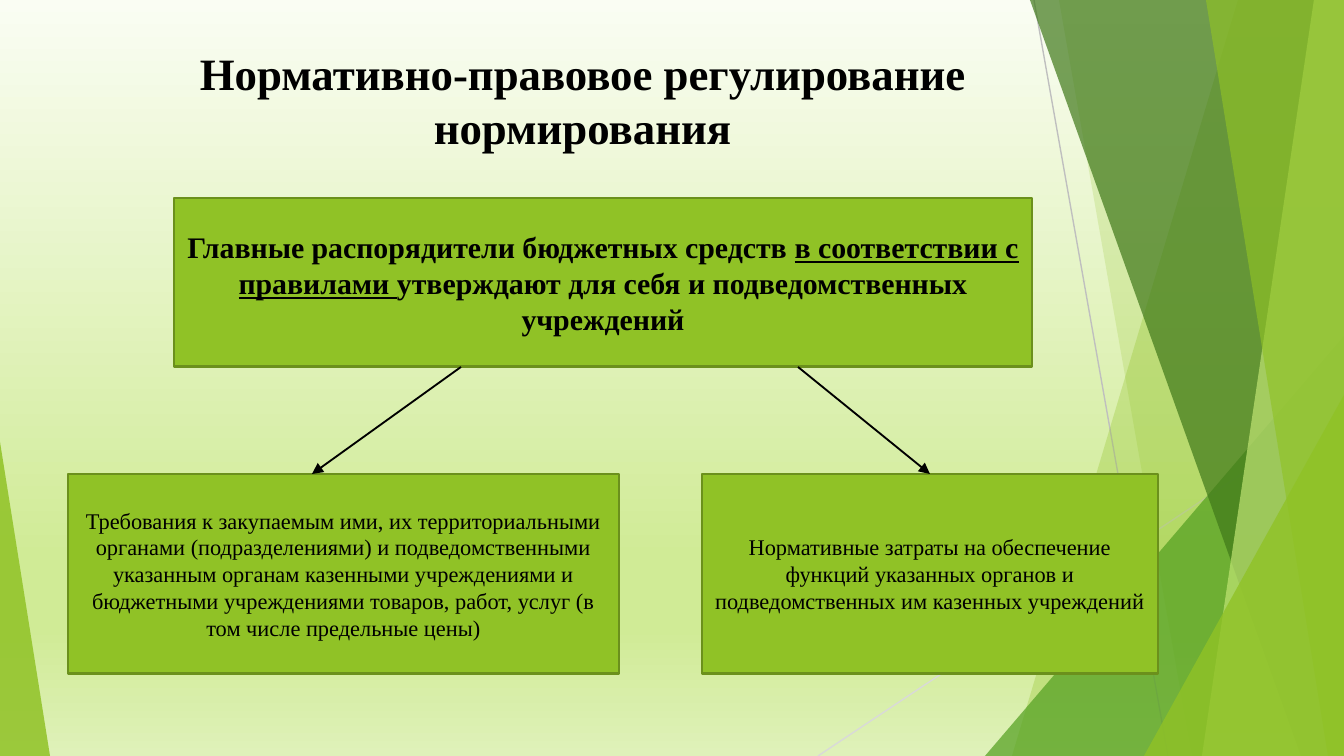
import pptx
import pptx.dml.color
import pptx.enum.dml
import pptx.enum.shapes
import pptx.enum.text
import pptx.oxml
import pptx.oxml.ns
import pptx.util
from dataclasses import dataclass
from lxml import etree

SCALE = 914400 / 134.4
WIDE, HIGH = 1344, 756
QN = pptx.oxml.ns.qn
KIND = pptx.enum.shapes.MSO_SHAPE


@dataclass(frozen=True)
class Theme:
    """Colours, font and type sizes of the slide."""
    font: str = "Times New Roman"
    ink: str = "000000"
    lime: str = "90C226"
    edge: str = "6B901C"
    leaf: str = "54A021"
    pine: str = "3F7819"
    pale: str = "C0E474"
    grey: str = "BFBFBF"
    mist: str = "D9D9D9"
    sky: tuple = ((0, "FAFDF3"), (74, "D0EB96"), (83, "D0EB96"), (100, "DFF1B9"))
    head: int = 24
    lead: int = 16
    body: int = 12


THEME = Theme()


def px(size):
    """Turn pixels into EMU."""
    return pptx.util.Emu(round(size * SCALE))


def rgb(code):
    """Turn a hex code into a colour."""
    return pptx.dml.color.RGBColor.from_string(code)


def paint(shape, color, alpha=100):
    """Fill a shape flatly, with opacity in percent."""
    shape.shadow.inherit = False
    shape.fill.solid()
    shape.fill.fore_color.rgb = rgb(color)
    if alpha < 100:
        tint = shape.element.spPr.find(QN("a:solidFill"))[0]
        etree.SubElement(tint, QN("a:alpha"), val=str(alpha * 1000))


def backdrop(slide):
    """Lay the vertical gradient behind the slide."""
    fill = slide.background.fill
    fill.gradient()
    fill.gradient_angle = 270
    stops = next(slide.element.iter(QN("a:gsLst")))
    for stop in list(stops):
        stops.remove(stop)
    for place, color in THEME.sky:
        stop = etree.SubElement(stops, QN("a:gs"), pos=str(place * 1000))
        etree.SubElement(stop, QN("a:srgbClr"), val=color)


def band(slide, top, foot, color, alpha):
    """Draw a slanted band that reaches the right edge."""
    pen = slide.shapes.build_freeform(top, 0, scale=SCALE)
    pen.add_line_segments([(WIDE, 0), (WIDE, HIGH), (foot, HIGH)], close=True)
    shape = pen.convert_to_shape()
    paint(shape, color, alpha)
    shape.line.fill.background()


def wedge(slide, left, top, width, apex, color, alpha):
    """Draw a triangle that stands on the bottom edge."""
    shape = slide.shapes.add_shape(
        KIND.ISOSCELES_TRIANGLE, px(left), px(top), px(width), px(HIGH - top))
    shape.adjustments[0] = apex
    paint(shape, color, alpha)
    shape.line.fill.background()


def line(slide, start, end, color, width):
    """Draw a straight line."""
    link = slide.shapes.add_connector(
        pptx.enum.shapes.MSO_CONNECTOR.STRAIGHT, *map(px, start + end))
    link.line.color.rgb = rgb(color)
    link.line.width = pptx.util.Pt(width)
    etree.SubElement(link.element.spPr, QN("a:effectLst"))
    return link


def arrow(slide, start, end):
    """Draw a line with an arrowhead at its end."""
    link = line(slide, start, end, THEME.ink, 1)
    etree.SubElement(link.line._get_or_add_ln(), QN("a:tailEnd"), type="triangle")
    return link


def write(shape, runs, size, bold, anchor):
    """Write centred runs, each a text and its underline."""
    frame = shape.text_frame
    frame.word_wrap = True
    frame.vertical_anchor = anchor
    para = frame.paragraphs[0]
    para.alignment = pptx.enum.text.PP_ALIGN.CENTER
    for text, under in runs:
        run = para.add_run()
        run.text = text
        font = run.font
        font.name, font.size = THEME.font, pptx.util.Pt(size)
        font.bold, font.underline = bold, under
        font.color.rgb = rgb(THEME.ink)


def title(slide, area, text):
    """Add the slide heading."""
    box = slide.shapes.add_textbox(*map(px, area))
    write(box, [(text, False)], THEME.head, True, pptx.enum.text.MSO_ANCHOR.TOP)


def card(slide, area, runs, size, bold=False):
    """Add a framed rectangle with text."""
    shape = slide.shapes.add_shape(KIND.RECTANGLE, *map(px, area))
    paint(shape, THEME.lime)
    shape.line.color.rgb = rgb(THEME.edge)
    shape.line.width = pptx.util.Pt(1.5)
    write(shape, runs, size, bold, pptx.enum.text.MSO_ANCHOR.MIDDLE)
    return shape


def decor(slide):
    """Draw the green facets and thin lines."""
    line(slide, (1034, 0), (1168, HIGH), THEME.grey, 0.75)
    line(slide, (WIDE, 406), (818, HIGH), THEME.mist, 0.75)
    band(slide, 1238, 1012, THEME.lime, 30)
    band(slide, 1059, 1192, THEME.lime, 20)
    wedge(slide, 985, 336, 359, 1, THEME.leaf, 72)
    band(slide, 1030, 1301, THEME.pine, 70)
    band(slide, 1314, 1202, THEME.pale, 70)
    band(slide, 1206, 1328, THEME.lime, 65)
    wedge(slide, 1144, 395, 200, 1, THEME.lime, 80)
    wedge(slide, 0, 442, 50, 0, THEME.lime, 85)


def main():
    """Build the slide and save it."""
    deck = pptx.Presentation()
    deck.slide_width, deck.slide_height = px(WIDE), px(HIGH)
    slide = deck.slides.add_slide(deck.slide_layouts[6])
    backdrop(slide)
    decor(slide)
    card(slide, (174, 198, 858, 169), [
        ("Главные распорядители бюджетных средств ", False),
        ("в соответствии с правилами ", True),
        ("утверждают для себя и подведомственных учреждений", False),
    ], THEME.lead, True)
    card(slide, (68, 474, 551, 200), [(
        "Требования к закупаемым ими, их территориальными органами "
        "(подразделениями) и подведомственными указанным органам казенными "
        "учреждениями и бюджетными учреждениями товаров, работ, услуг "
        "(в том числе предельные цены)", False)], THEME.body)
    costs = card(slide, (702, 474, 456, 200), [(
        "Нормативные затраты на обеспечение функций указанных органов и "
        "подведомственных им казенных учреждений", False)], THEME.body)
    title(slide, (101, 39, 963, 132),
          "Нормативно-правовое регулирование нормирования")
    arrow(slide, (461, 367), (312, 474))
    arrow(slide, (798, 367), (930, 474)).end_connect(costs, 0)
    deck.save("out.pptx")


if __name__ == "__main__":
    main()
